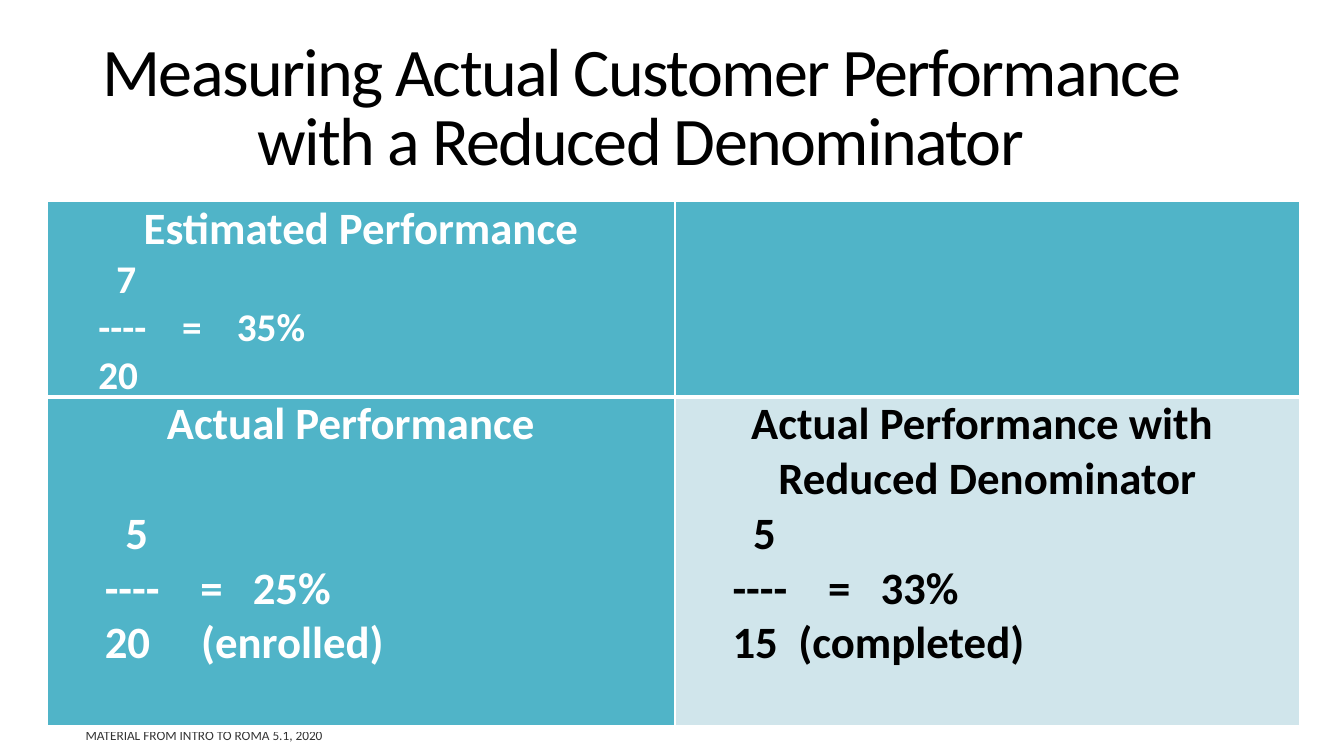
from dataclasses import dataclass

from lxml.etree import SubElement
from pptx import Presentation
from pptx.dml.color import RGBColor as Rgb
from pptx.enum.text import MSO_ANCHOR as Anchor, PP_ALIGN as Align
from pptx.oxml.ns import qn
from pptx.util import Cm, Pt


@dataclass(frozen=True)
class Theme:
    font: str = "Calibri"
    dark: str = "000000"
    light: str = "FFFFFF"
    teal: str = "50B4C8"
    pale: str = "D0E5EB"
    title: float = 48.6
    heading: float = 32
    estimate: float = 28
    source: float = 9.5
    thin: float = 1
    thick: float = 3


def write(paragraph, text, *, font, size, color, bold=False, align=Align.LEFT,
          tabs=(), before=0, line=None, tracking=0, opacity=100):
    """Fill a paragraph; tabs are in cm, before and tracking in points."""
    if tabs:
        tab_list = SubElement(paragraph._p.get_or_add_pPr(), qn("a:tabLst"))
        for stop in tabs:
            SubElement(tab_list, qn("a:tab"), pos=str(Cm(stop)), algn="l")
    paragraph.alignment = align
    if before:
        paragraph.space_before = Pt(before)
    if line:
        paragraph.line_spacing = line
    run = paragraph.add_run()
    run.text = text
    run.font.name, run.font.size, run.font.bold = font, Pt(size), bold
    run.font.color.rgb = Rgb.from_string(color)
    props = run._r.get_or_add_rPr()
    if tracking:
        props.set("spc", str(round(tracking * 100)))
    if opacity < 100:
        tint = props.find(qn("a:solidFill"))[0]
        SubElement(tint, qn("a:alpha"), val=str(opacity * 1000))


class SlideBuilder:
    def __init__(self, slide, theme):
        self.slide = slide
        self.theme = theme

    def text(self, content, left, top, width, height, **style):
        box = self.slide.shapes.add_textbox(Cm(left), Cm(top), Cm(width), Cm(height))
        frame = box.text_frame
        frame.word_wrap = True
        frame.vertical_anchor = Anchor.MIDDLE
        write(frame.paragraphs[0], content, font=self.theme.font, **style)

    def grid(self, left, top, widths, heights):
        frame = self.slide.shapes.add_table(
            len(heights), len(widths), Cm(left), Cm(top), Cm(sum(widths)), Cm(sum(heights)))
        table = frame.table
        table.first_row = table.horz_banding = False
        for column, width in zip(table.columns, widths):
            column.width = Cm(width)
        for row, height in zip(table.rows, heights):
            row.height = Cm(height)
        return table

    def panel(self, cell, fill, top_rule, bottom_rule):
        thin = self.theme.thin
        rules = {"L": thin, "R": thin, "T": top_rule, "B": bottom_rule}
        for side, weight in rules.items():
            edge = SubElement(cell._tc.get_or_add_tcPr(), qn(f"a:ln{side}"), w=str(Pt(weight)))
            paint = SubElement(edge, qn("a:solidFill"))
            SubElement(paint, qn("a:srgbClr"), val=self.theme.light)
        cell.fill.solid()
        cell.fill.fore_color.rgb = Rgb.from_string(fill)
        cell.margin_left = cell.margin_right = Cm(0.18)
        cell.margin_top = cell.margin_bottom = 0

    def fraction(self, cell, headings, lines, *, size, color, gap=0):
        """Centred headings, then tabbed lines given as (text, tab stops)."""
        look = dict(font=self.theme.font, color=color, bold=True)
        frame = cell.text_frame
        for number, heading in enumerate(headings):
            paragraph = frame.add_paragraph() if number else frame.paragraphs[0]
            write(paragraph, heading, size=self.theme.heading, align=Align.CENTER, **look)
        for number, (line, tabs) in enumerate(lines):
            write(frame.add_paragraph(), line, size=size, tabs=tabs,
                  before=0 if number else gap, **look)


def main():
    theme = Theme()
    deck = Presentation()
    deck.slide_width, deck.slide_height = Cm(33.87), Cm(19.05)
    builder = SlideBuilder(deck.slides.add_slide(deck.slide_layouts[6]), theme)

    builder.text("Measuring Actual Customer Performance with a Reduced Denominator",
                 1.19, 0.48, 29.92, 4.6, size=theme.title, color=theme.dark,
                 align=Align.CENTER, line=0.85, tracking=-1.2)

    table = builder.grid(1.19, 5.08, widths=(15.82, 15.75), heights=(4.93, 8.28))
    estimated, unused = table.cell(0, 0), table.cell(0, 1)
    actual, reduced = table.cell(1, 0), table.cell(1, 1)
    for cell in (estimated, unused):
        builder.panel(cell, theme.teal, theme.thin, theme.thick)
    for cell, fill in ((actual, theme.teal), (reduced, theme.pale)):
        builder.panel(cell, fill, theme.thick, theme.thin)

    builder.fraction(
        estimated, ["Estimated Performance"],
        [("\t7", [1.56]), ("\t----\t=\t35%", [1.11, 3.22, 4.6]), ("\t20", [1.11])],
        size=theme.estimate, color=theme.light)
    numerator, bar = [1.79], [1.27, 3.68, 5]
    builder.fraction(
        actual, ["Actual Performance  "],
        [("\t5", numerator), ("\t----\t=\t25%", bar), ("\t20\t(enrolled)", [1.27, 3.7])],
        size=theme.heading, color=theme.light, gap=39)
    builder.fraction(
        reduced, ["Actual Performance with ", "Reduced Denominator"],
        [("\t5", numerator), ("\t----\t=\t33%", bar), ("\t15\t(completed)", [1.27, 2.93])],
        size=theme.heading, color=theme.dark)

    builder.text("MATERIAL FROM INTRO TO ROMA 5.1, 2020", 1.91, 18.21, 13.97, 0.64,
                 size=theme.source, color=theme.dark, opacity=80)
    deck.save("out.pptx")


if __name__ == "__main__":
    main()
